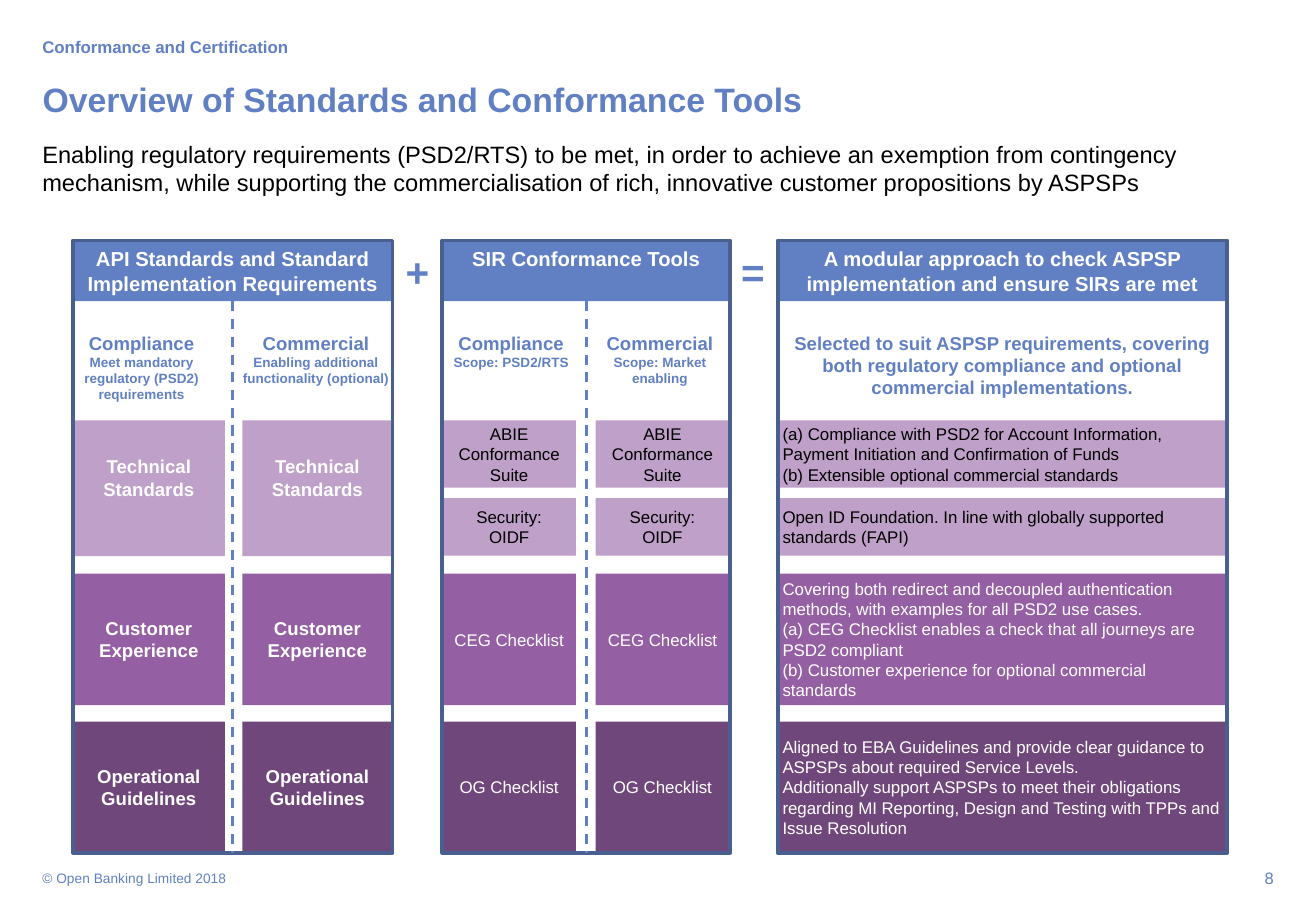
from dataclasses import dataclass
from typing import NamedTuple

from lxml import etree
from pptx import Presentation
from pptx.dml.color import RGBColor
from pptx.enum.dml import MSO_LINE
from pptx.enum.shapes import MSO_CONNECTOR, MSO_SHAPE
from pptx.enum.text import MSO_ANCHOR, MSO_AUTO_SIZE, PP_ALIGN
from pptx.oxml.ns import qn
from pptx.shapes.autoshape import Shape
from pptx.slide import Slide
from pptx.util import Pt

RECT = MSO_SHAPE.RECTANGLE
STRAIGHT = MSO_CONNECTOR.STRAIGHT
DASH = MSO_LINE.DASH
TOP, MID = MSO_ANCHOR.TOP, MSO_ANCHOR.MIDDLE
LEFT, CENTER, RIGHT = PP_ALIGN.LEFT, PP_ALIGN.CENTER, PP_ALIGN.RIGHT
FIXED = MSO_AUTO_SIZE.NONE
BOTTOM = 2


@dataclass(frozen=True)
class Theme:
    font: str = "Arial"
    blue: str = "6180C3"
    edge: str = "485F90"
    light: str = "BFA0C8"
    purple: str = "9560A3"
    dark: str = "70477B"
    white: str = "FFFFFF"
    black: str = "000000"
    title: float = 20
    lead: float = 14
    sign: float = 24
    head: float = 12
    label: float = 11
    body: float = 10
    page: float = 9.8
    note: float = 8.1
    small: float = 8


THEME = Theme()


class Box(NamedTuple):
    x: float
    y: float
    w: float
    h: float


class Row(NamedTuple):
    y: float
    h: float
    fill: str
    ink: str


class Cell(NamedTuple):
    row: Row
    text: str
    pad: float = 3.6


class Lane(NamedTuple):
    x: float
    w: float


class Note(NamedTuple):
    x: float
    w: float
    text: str


class Panel(NamedTuple):
    x: float
    w: float
    head: str
    lanes: list[Lane]
    notes: list[Note]
    cells: list[Cell]
    size: float = THEME.body
    bold: bool = False
    align: PP_ALIGN = CENTER
    side: float = 7.2


HEAD_Y, HEAD_H, FRAME_H = 142.6, 36, 362.9
NOTE_Y, NOTE_H = 193, 48
TECH = Row(249.1, 80.6, THEME.light, THEME.white)
SUITE = Row(249.1, 40, THEME.light, THEME.black)
SAFE = Row(295.2, 34.2, THEME.light, THEME.black)
JOURNEY = Row(340, 78, THEME.purple, THEME.white)
GUIDE = Row(427.7, 77.8, THEME.dark, THEME.white)

PANELS = [
    Panel(
        43.2, 189.4, "API Standards and Standard Implementation Requirements",
        [Lane(43.2, 90), Lane(143.6, 89)],
        [Note(31, 105.8, "Compliance\nMeet mandatory regulatory (PSD2) requirements"),
         Note(135, 104.4, "Commercial\nEnabling additional functionality (optional)")],
        [Cell(TECH, "Technical Standards", 16.2),
         Cell(JOURNEY, "Customer Experience"),
         Cell(GUIDE, "Operational Guidelines")],
        size=THEME.label, bold=True),
    Panel(
        262.1, 170.6, "SIR Conformance Tools",
        [Lane(262.1, 79.2), Lane(352.9, 79.2)],
        [Note(259, 87.8, "Compliance\nScope: PSD2/RTS"),
         Note(346, 90, "Commercial\nScope: Market enabling")],
        [Cell(SUITE, "ABIE Conformance Suite"),
         Cell(SAFE, "Security: OIDF"),
         Cell(JOURNEY, "CEG Checklist"),
         Cell(GUIDE, "OG Checklist")]),
    Panel(
        460.8, 266.4,
        "A modular approach to check ASPSP implementation and ensure SIRs are met",
        [Lane(460.8, 266.4)],
        [Note(460.8, 266.4, "Selected to suit ASPSP requirements, covering both regulatory "
              "compliance and optional commercial implementations.")],
        [Cell(SUITE, "(a) Compliance with PSD2 for Account Information, Payment Initiation "
              "and Confirmation of Funds\n(b) Extensible optional commercial standards"),
         Cell(SAFE, "Open ID Foundation. In line with globally supported standards (FAPI)"),
         Cell(JOURNEY, "Covering both redirect and decoupled authentication methods, with "
              "examples for all PSD2 use cases.\n(a) CEG Checklist enables a check that all "
              "journeys are PSD2 compliant\n(b) Customer experience for optional commercial "
              "standards"),
         Cell(GUIDE, "Aligned to EBA Guidelines and provide clear guidance to ASPSPs about "
              "required Service Levels.\nAdditionally support ASPSPs to meet their obligations "
              "regarding MI Reporting, Design and Testing with TPPs and Issue Resolution")],
        align=LEFT, side=2.9),
]


def write(shape: Shape, text: str, *, size: float, ink: str = THEME.blue, bold: bool = False,
          align: PP_ALIGN = LEFT, anchor: MSO_ANCHOR = TOP, rest: float | None = None,
          side: float = 7.2, pad: float = 3.6, space: float = 1, wrap: bool = True) -> None:
    frame = shape.text_frame
    frame.auto_size, frame.word_wrap, frame.vertical_anchor = FIXED, wrap, anchor
    frame.margin_left = frame.margin_right = Pt(side)
    frame.margin_top, frame.margin_bottom = Pt(3.6), Pt(pad)
    frame.text = text
    for rank, para in enumerate(frame.paragraphs):
        para.alignment, para.line_spacing = align, space
        font = para.runs[0].font
        font.name, font.bold = THEME.font, bold
        font.size = Pt(rest if rank and rest else size)
        font.color.rgb = RGBColor.from_string(ink)


def label(slide: Slide, box: Box, text: str, **form) -> None:
    write(slide.shapes.add_textbox(*map(Pt, box)), text, **form)


def block(slide: Slide, box: Box, fill: str | None = None) -> Shape:
    shape = slide.shapes.add_shape(RECT, *map(Pt, box))
    shape.shadow.inherit = False
    if fill:
        shape.fill.solid()
        shape.fill.fore_color.rgb = RGBColor.from_string(fill)
        shape.line.fill.background()
    else:
        shape.fill.background()
        shape.line.color.rgb = RGBColor.from_string(THEME.edge)
        shape.line.width = Pt(2.25)
    return shape


def divide(slide: Slide, head: Shape, frame: Shape) -> None:
    line = slide.shapes.add_connector(STRAIGHT, 0, 0, 0, 0)
    line.begin_connect(head, BOTTOM)
    line.end_connect(frame, BOTTOM)
    line.line.color.rgb = RGBColor.from_string(THEME.blue)
    line.line.width, line.line.dash_style = Pt(1.5), DASH
    etree.SubElement(line._element.spPr, qn("a:effectLst"))


def draw(slide: Slide, panel: Panel) -> None:
    head = block(slide, Box(panel.x, HEAD_Y, panel.w, HEAD_H), THEME.blue)
    write(head, panel.head, size=THEME.head, ink=THEME.white, bold=True, align=CENTER)
    for note in panel.notes:
        label(slide, Box(note.x, NOTE_Y, note.w, NOTE_H), note.text,
              size=THEME.label, rest=THEME.small, bold=True, align=CENTER)
    for lane in panel.lanes:
        for cell in panel.cells:
            row = cell.row
            shape = block(slide, Box(lane.x, row.y, lane.w, row.h), row.fill)
            write(shape, cell.text, size=panel.size, ink=row.ink, bold=panel.bold,
                  align=panel.align, anchor=MID, side=panel.side, pad=cell.pad)
    frame = block(slide, Box(panel.x, HEAD_Y, panel.w, FRAME_H))
    if len(panel.lanes) > 1:
        divide(slide, head, frame)


def main() -> None:
    deck = Presentation()
    deck.slide_width, deck.slide_height = Pt(779.76), Pt(540)
    slide = deck.slides.add_slide(deck.slide_layouts[5])
    title = slide.shapes.title
    title.left, title.top, title.width, title.height = map(Pt, Box(18, 46, 743.8, 27.4))
    write(title, "Overview of Standards and Conformance Tools",
          size=THEME.title, bold=True, space=0.9)
    label(slide, Box(18, 19.4, 582.5, 21), "Conformance and Certification",
          size=THEME.body, bold=True, space=0.9)
    label(slide, Box(18, 79.2, 743.8, 41),
          "Enabling regulatory requirements (PSD2/RTS) to be met, in order to achieve an "
          "exemption from contingency mechanism, while supporting the commercialisation of "
          "rich, innovative customer propositions by ASPSPs", size=THEME.lead, ink=THEME.black)
    for panel in PANELS:
        draw(slide, panel)
    for x, w, sign in ((233.3, 34.6, "+"), (432, 28.8, "=")):
        label(slide, Box(x, HEAD_Y, w, HEAD_H), sign, size=THEME.sign, bold=True, wrap=False)
    label(slide, Box(18, 512.6, 152.6, 15.8), "© Open Banking Limited 2018",
          size=THEME.note, anchor=MID)
    label(slide, Box(727.2, 512.6, 34.6, 15.8), "8", size=THEME.page, align=RIGHT, anchor=MID)
    deck.save("out.pptx")


if __name__ == "__main__":
    main()
